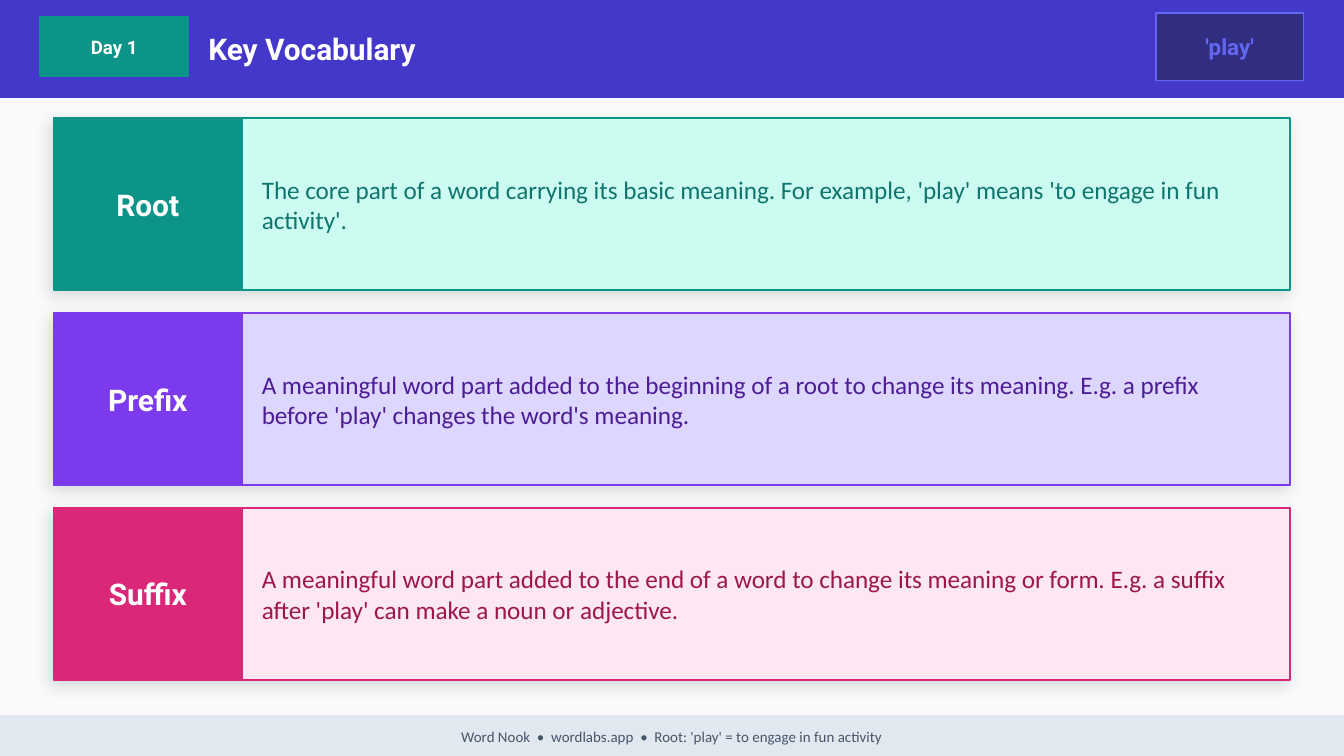
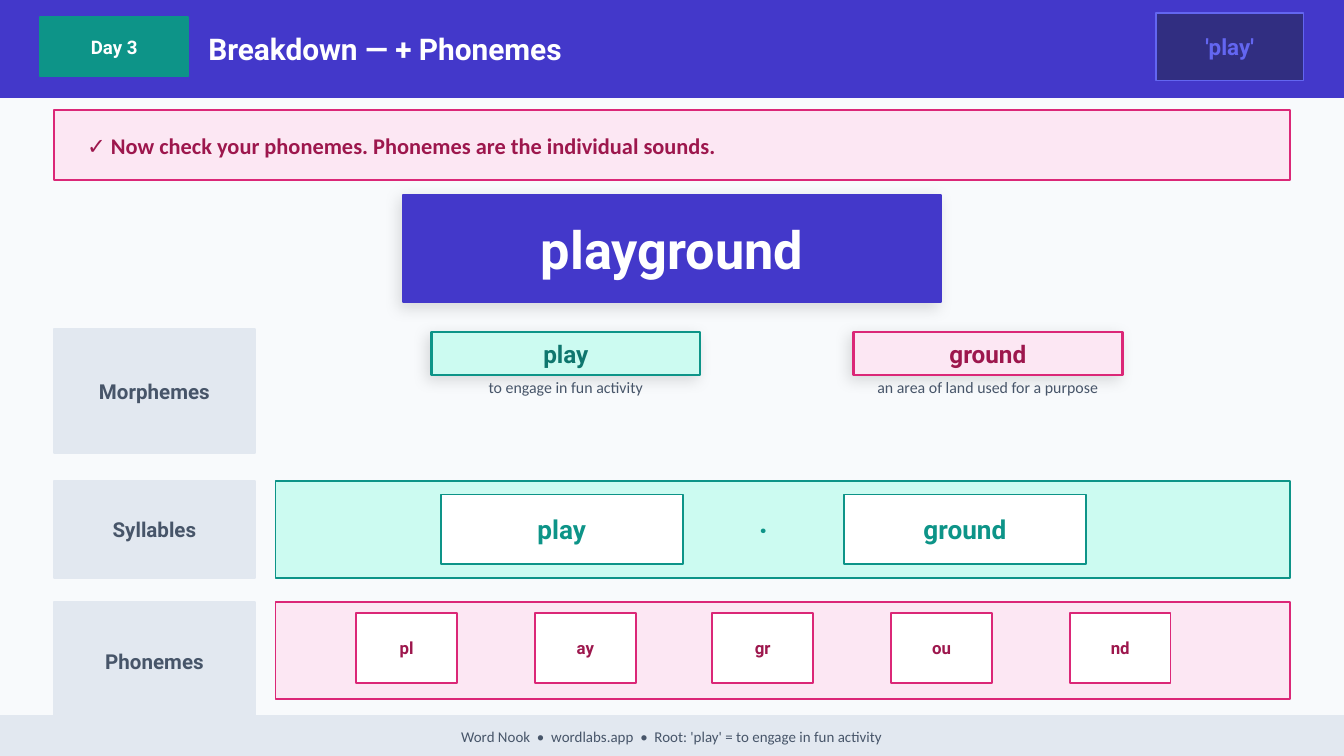
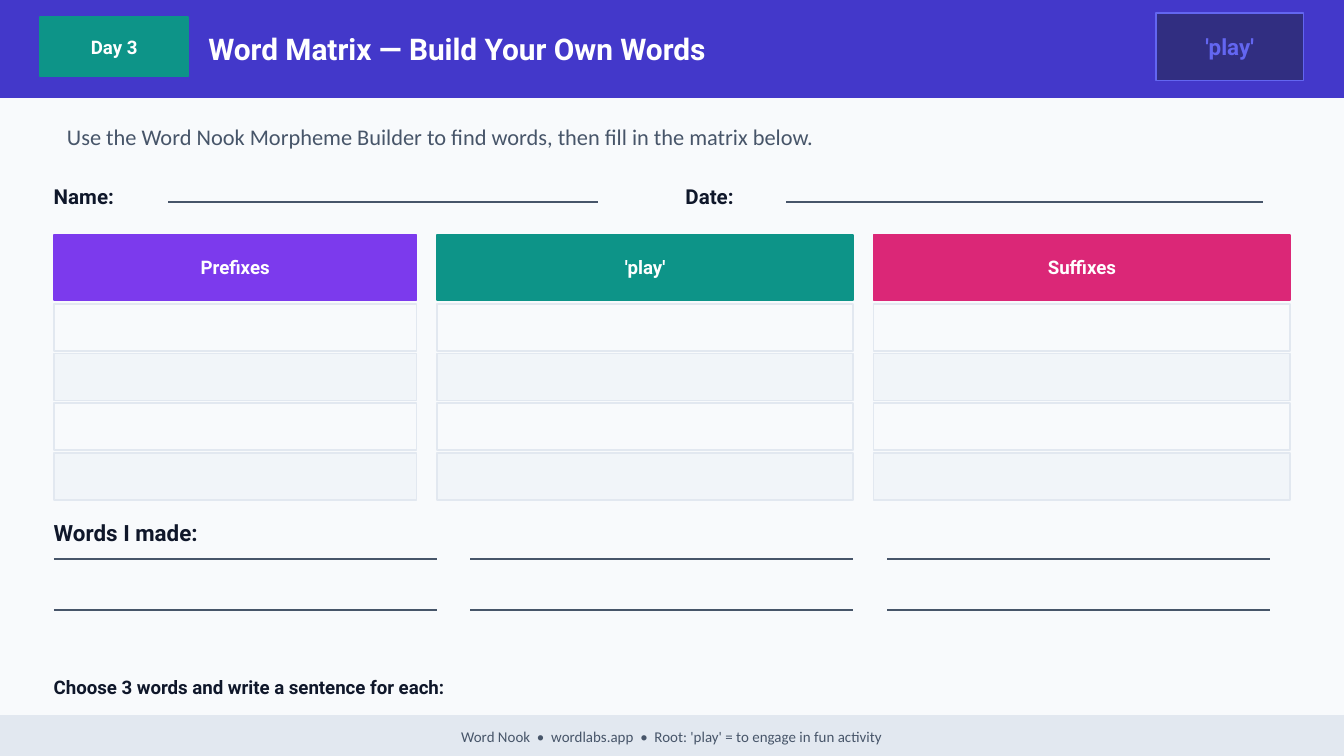
from lxml.etree import SubElement
from pptx import Presentation
from pptx.dml.color import RGBColor
from pptx.enum.shapes import MSO_CONNECTOR, MSO_SHAPE
from pptx.enum.text import MSO_ANCHOR as Anchor, MSO_AUTO_SIZE, PP_ALIGN as Align
from pptx.oxml.ns import qn
from pptx.util import Emu, Pt

PX = 9144
COLORS = {
    "page": "F8FAFC", "stripe": "F1F5F9", "white": "FFFFFF", "ink": "0F172A",
    "slate": "475569", "mist": "E2E8F0", "indigo": "4338CA",
    "navy": "312E81", "periwinkle": "6366F1",
    "teal": "0D9488", "teal_pale": "CCFBF1", "teal_dark": "0F766E",
    "violet": "7C3AED", "violet_pale": "DDD6FE", "violet_dark": "4C1D95",
    "pink": "DB2777", "pink_pale": "FCE7F3", "pink_dark": "9D174D",
}
HEADING, BODY = "Roboto", "Calibri"
LEFT, WIDTH = 40, 920
ROOT = "'play'"
FOOTER = "Word Nook  •  wordlabs.app  •  Root: 'play' = to engage in fun activity"


def px(*values):
    return [Emu(value * PX) for value in values]


def rgb(name):
    return RGBColor.from_string(COLORS[name])


def write(shape, text, size=10, color="white", font=HEADING, bold=True,
          align=Align.CENTER, anchor=Anchor.MIDDLE, inset=(0, 0)):
    frame = shape.text_frame
    frame.word_wrap = True
    frame.auto_size = MSO_AUTO_SIZE.NONE
    frame.vertical_anchor = anchor
    frame.margin_left, frame.margin_top = px(*inset)
    frame.margin_right, frame.margin_bottom = px(*inset)
    frame.text = text
    paragraph = frame.paragraphs[0]
    paragraph.alignment = align
    paragraph.font.name = font
    paragraph.font.size = Pt(size)
    paragraph.font.bold = bold
    paragraph.font.color.rgb = rgb(color)


def add_label(slide, box, text, **style):
    label = slide.shapes.add_textbox(*px(*box))
    write(label, text, **style)


def add_box(slide, box, fill, line=None, text=None, line_width=1, shadow=False, **style):
    shape = slide.shapes.add_shape(MSO_SHAPE.RECTANGLE, *px(*box))
    shape.fill.solid()
    shape.fill.fore_color.rgb = rgb(fill)
    shape.line.color.rgb = rgb(line or fill)
    shape.line.width = Pt(line_width)
    shape.shadow.inherit = False
    if shadow:
        add_shadow(shape)
    if text:
        write(shape, text, **style)
    return shape


def add_shadow(shape):
    effects = shape._element.spPr.find(qn("a:effectLst"))
    outer = SubElement(effects, qn("a:outerShdw"), blurRad=str(Pt(8)), dist=str(Pt(3)),
                       dir="8100000", algn="bl", rotWithShape="0")
    color = SubElement(outer, qn("a:srgbClr"), val="000000")
    SubElement(color, qn("a:alpha"), val="12000")


def add_rule(slide, left, right, y, width):
    rule = slide.shapes.add_connector(MSO_CONNECTOR.STRAIGHT, *px(left, y, right, y))
    rule.line.color.rgb = rgb("slate")
    rule.line.width = Pt(width)
    SubElement(rule._element.spPr, qn("a:effectLst"))


def add_slide(presentation, day, heading):
    slide = presentation.slides.add_slide(presentation.slide_layouts[5])
    slide.background.fill.solid()
    slide.background.fill.fore_color.rgb = rgb("page")
    title = slide.shapes.title
    title.left, title.top, title.width, title.height = px(155, 0, 810, 72)
    write(title, heading, size=16, align=Align.LEFT)
    band = add_box(slide, (0, 0, 1000, 72), "indigo")
    title._element.addprevious(band._element)
    add_box(slide, (30, 13, 110, 44), "teal", text=day)
    add_box(slide, (860, 10, 110, 50), "navy", "periwinkle", ROOT, size=12, color="periwinkle")
    return slide


def add_footer(slide):
    add_box(slide, (0, 533, 1000, 30), "mist", text=FOOTER,
            size=8, color="slate", font=BODY, bold=False)


def add_definition(slide, top, term, meaning, hue):
    add_box(slide, (LEFT, top, WIDTH, 128), hue + "_pale", hue, shadow=True)
    add_box(slide, (LEFT, top, 140, 128), hue, text=term, size=16)
    add_label(slide, (185, top + 4, 760, 120), meaning, size=13.5, color=hue + "_dark",
              font=BODY, bold=False, align=Align.LEFT, inset=(10, 5))


def add_row_name(slide, top, height, name):
    add_box(slide, (LEFT, top, 150, height), "mist", text=name, size=11, color="slate")


def add_morpheme(slide, left, part, meaning, hue):
    add_box(slide, (left, 247, 200, 32), hue + "_pale", hue, part, line_width=1.5,
            shadow=True, size=13, color=hue + "_dark")
    add_label(slide, (left, 281, 200, 22), meaning, size=8.5, color="slate",
              font=BODY, bold=False, anchor=Anchor.TOP)


def build_vocabulary(presentation):
    slide = add_slide(presentation, "Day 1", "Key Vocabulary")
    definitions = [
        ("Root", "The core part of a word carrying its basic meaning. "
                 "For example, 'play' means 'to engage in fun activity'.", "teal"),
        ("Prefix", "A meaningful word part added to the beginning of a root to change its "
                   "meaning. E.g. a prefix before 'play' changes the word's meaning.", "violet"),
        ("Suffix", "A meaningful word part added to the end of a word to change its meaning "
                   "or form. E.g. a suffix after 'play' can make a noun or adjective.", "pink"),
    ]
    for index, definition in enumerate(definitions):
        add_definition(slide, 88 + index * 145, *definition)
    add_footer(slide)


def build_breakdown(presentation):
    slide = add_slide(presentation, "Day 3", "Breakdown — + Phonemes")
    add_box(slide, (LEFT, 82, WIDTH, 52), "pink_pale", "pink")
    add_label(slide, (55, 82, 900, 52),
              "✓ Now check your phonemes. Phonemes are the individual sounds.",
              size=12, color="pink_dark", font=BODY, align=Align.LEFT, inset=(10, 5))
    add_box(slide, (300, 145, 400, 80), "indigo", text="playground", shadow=True, size=28)

    add_row_name(slide, 245, 92, "Morphemes")
    add_morpheme(slide, 321, "play", "to engage in fun activity", "teal")
    add_morpheme(slide, 635, "ground", "an area of land used for a purpose", "pink")

    add_row_name(slide, 358, 72, "Syllables")
    add_box(slide, (205, 358, 755, 72), "teal_pale", "teal")
    for index, syllable in enumerate(["play", "ground"]):
        add_box(slide, (328 + index * 300, 368, 180, 52), "white", "teal", syllable,
                size=14, color="teal")
    add_label(slide, (508, 368, 120, 52), "·", size=16, color="teal")

    add_row_name(slide, 448, 88, "Phonemes")
    add_box(slide, (205, 448, 755, 72), "pink_pale", "pink")
    for index, phoneme in enumerate(["pl", "ay", "gr", "ou", "nd"]):
        add_box(slide, (round(265 + index * 132.75), 456, 75, 52), "white", "pink", phoneme,
                size=9, color="pink_dark")
    add_footer(slide)


def build_matrix(presentation):
    slide = add_slide(presentation, "Day 3", "Word Matrix — Build Your Own Words")
    add_label(slide, (LEFT, 82, WIDTH, 40),
              "Use the Word Nook Morpheme Builder to find words, then fill in the matrix below.",
              size=12, color="slate", font=BODY, bold=False, align=Align.LEFT, inset=(10, 5))
    prompt = {"color": "ink", "align": Align.LEFT}
    add_label(slide, (LEFT, 128, 80, 36), "Name:", size=11, **prompt)
    add_rule(slide, 125, 445, 150, 1)
    add_label(slide, (510, 128, 70, 36), "Date:", size=11, **prompt)
    add_rule(slide, 585, 940, 150, 1)

    columns = [("Prefixes", 40, 270, "violet"), (ROOT, 325, 310, "teal"),
               ("Suffixes", 650, 310, "pink")]
    for name, left, width, hue in columns:
        add_box(slide, (left, 175, width, 48), hue, text=name)
        for row in range(4):
            fill = "stripe" if row % 2 else "page"
            add_box(slide, (left, 226 + row * 37, width, 35), fill, "mist")

    add_label(slide, (LEFT, 380, WIDTH, 32), "Words I made:", size=12, **prompt)
    for y in (416, 454):
        for left in range(LEFT, 661, 310):
            add_rule(slide, left, left + 285, y, 0.75)
    add_label(slide, (LEFT, 496, WIDTH, 30),
              "Choose 3 words and write a sentence for each:", **prompt)
    add_footer(slide)


def main():
    presentation = Presentation()
    presentation.slide_width = Emu(1000 * PX)
    presentation.slide_height = Emu(1000 * PX * 9 // 16)
    build_vocabulary(presentation)
    build_breakdown(presentation)
    build_matrix(presentation)
    presentation.save("out.pptx")


if __name__ == "__main__":
    main()
